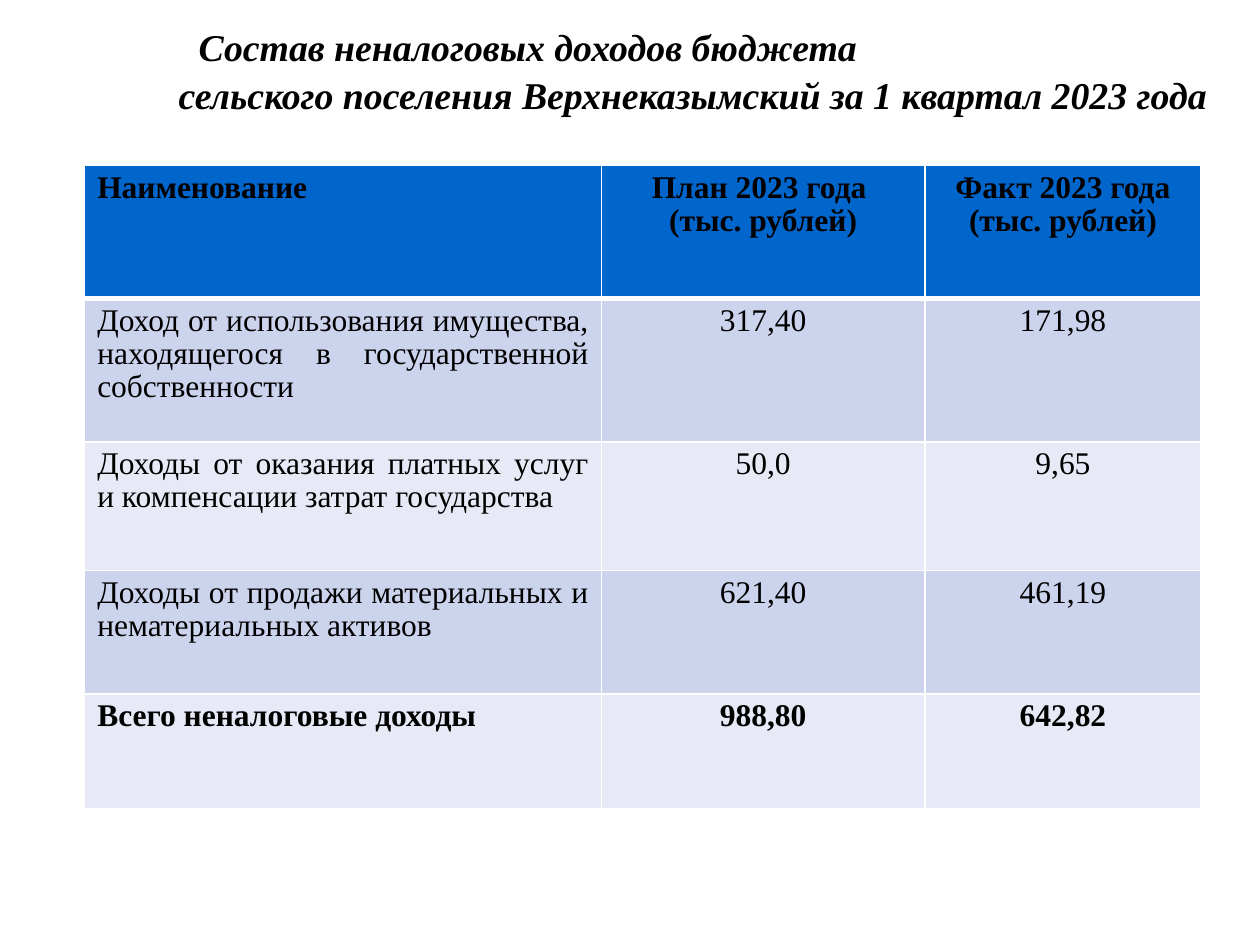
import pptx
import pptx.util
import pptx.dml.color
import pptx.enum.text
import pptx.oxml.ns
import lxml.etree

Pt = pptx.util.Pt
ALIGN = pptx.enum.text.PP_ALIGN
COLORS = {
    "text": "000000",
    "header": "0066CC",
    "odd": "CCD3EC",
    "even": "E7EAF6",
    "grid": "FFFFFF",
}
HEADING = [
    "Состав неналоговых доходов бюджета",
    "сельского поселения Верхнеказымский за 1 квартал 2023 года",
]
REVENUES = [
    ["Наименование", "План 2023 года \n(тыс. рублей)", "Факт 2023 года\n(тыс. рублей)"],
    ["Доход от использования имущества, находящегося в государственной собственности",
     "317,40", "171,98"],
    ["Доходы от оказания платных услуг и компенсации затрат государства", "50,0", "9,65"],
    ["Доходы от продажи материальных и нематериальных активов", "621,40", "461,19"],
    ["Всего неналоговые доходы", "988,80", "642,82"],
]
COLUMN_WIDTHS = [295.2, 185, 157.7]
ROW_HEIGHTS = [76, 82, 73.5, 70.5, 65.5]


class Deck:
    font = "Times New Roman"

    def __init__(self):
        self.presentation = pptx.Presentation()
        self.presentation.slide_width = Pt(720)
        self.presentation.slide_height = Pt(540)
        self.slide = self.presentation.slides.add_slide(self.presentation.slide_layouts[5])

    def color(self, name):
        return pptx.dml.color.RGBColor.from_string(COLORS[name])

    def format(self, paragraph, size, align, spacing, bold=False, italic=False):
        paragraph.alignment = align
        paragraph.line_spacing = spacing
        paragraph.space_before = Pt(0)
        for run in paragraph.runs:
            run.font.name = self.font
            run.font.size = Pt(size)
            run.font.bold = bold
            run.font.italic = italic
            run.font.color.rgb = self.color("text")

    def title(self, lines, left, top, width, height, indents):
        heading = self.slide.shapes.title
        heading.left, heading.top = Pt(left), Pt(top)
        heading.width, heading.height = Pt(width), Pt(height)
        frame = heading.text_frame
        frame.auto_size = pptx.enum.text.MSO_AUTO_SIZE.NONE
        frame.vertical_anchor = pptx.enum.text.MSO_ANCHOR.MIDDLE
        frame.text = "\n".join(lines)
        for paragraph, indent in zip(frame.paragraphs, indents):
            paragraph._p.get_or_add_pPr().set("marL", str(Pt(indent)))
            self.format(paragraph, 21.6, ALIGN.LEFT, 1.06, bold=True, italic=True)

    def borders(self, cell, top, bottom):
        properties = cell._tc.get_or_add_tcPr()
        sides = [("L", 1), ("R", 1), ("T", top), ("B", bottom)]
        for position, (side, weight) in enumerate(sides):
            line = lxml.etree.Element(pptx.oxml.ns.qn("a:ln" + side), w=str(Pt(weight)))
            fill = lxml.etree.SubElement(line, pptx.oxml.ns.qn("a:solidFill"))
            lxml.etree.SubElement(fill, pptx.oxml.ns.qn("a:srgbClr"), val=COLORS["grid"])
            properties.insert(position, line)

    def table(self, rows, left, top, widths, heights):
        table = self.slide.shapes.add_table(
            len(rows), len(widths), Pt(left), Pt(top), Pt(sum(widths)), Pt(sum(heights))
        ).table
        for column, width in zip(table.columns, widths):
            column.width = Pt(width)
        last = len(rows) - 1
        for r, (entries, height) in enumerate(zip(rows, heights)):
            table.rows[r].height = Pt(height)
            band = "header" if r == 0 else "odd" if r % 2 else "even"
            emphasized = r in (0, last)
            for c, entry in enumerate(entries):
                cell = table.cell(r, c)
                cell.fill.solid()
                cell.fill.fore_color.rgb = self.color(band)
                self.borders(cell, 3 if r == 1 else 1, 3 if r == 0 else 1)
                cell.text_frame.text = entry
                align = ALIGN.CENTER if c else ALIGN.LEFT if emphasized else ALIGN.JUSTIFY
                for paragraph in cell.text_frame.paragraphs:
                    self.format(paragraph, 18, align, 0.95, bold=emphasized)


def main():
    deck = Deck()
    deck.title(HEADING, 76.3, 0, 645, 79.2, [30, 18.5])
    deck.table(REVENUES, 48.4, 94.6, COLUMN_WIDTHS, ROW_HEIGHTS)
    deck.presentation.save("out.pptx")


if __name__ == "__main__":
    main()
